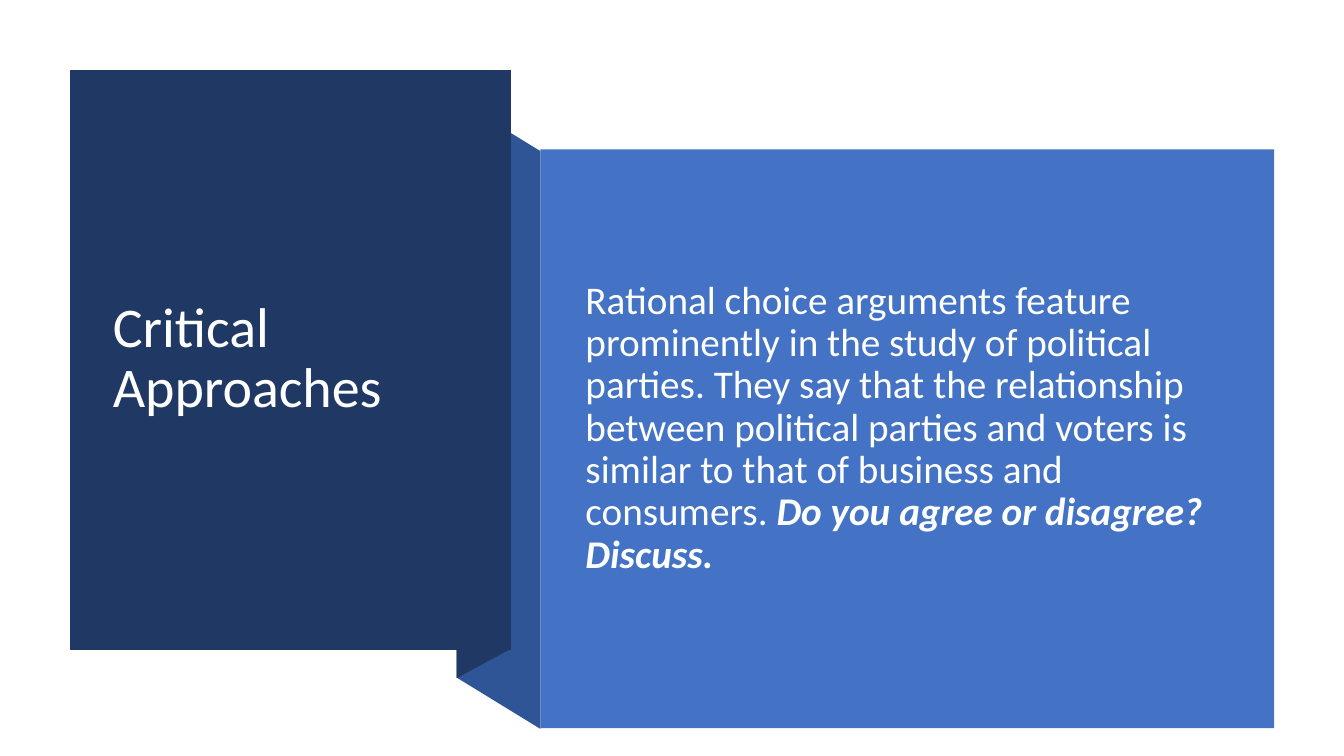
from dataclasses import dataclass

from pptx import Presentation
from pptx.dml.color import RGBColor
from pptx.enum.shapes import MSO_SHAPE
from pptx.enum.text import MSO_ANCHOR, MSO_AUTO_SIZE, PP_ALIGN
from pptx.util import Pt

FONT = "Calibri"
NAVY, BLUE, MID_BLUE, WHITE = "203864", "4472C4", "2F5597", "FFFFFF"


@dataclass
class Panel:
    """Flat outline given by its corners, in points."""
    corners: list[tuple[float, float]]
    fill: str


def rgb(code: str) -> RGBColor:
    return RGBColor.from_string(code)


def paint(sp, fill: str) -> None:
    sp.fill.solid()
    sp.fill.fore_color.rgb = rgb(fill)
    sp.line.fill.background()
    sp.shadow.inherit = False


def draw_panel(s, panel: Panel) -> None:
    start, *rest = [(Pt(x), Pt(y)) for x, y in panel.corners]
    builder = s.shapes.build_freeform(*start)
    builder.add_line_segments(rest, close=True)
    paint(builder.convert_to_shape(), panel.fill)


def place(sp, left: float, top: float, width: float, height: float) -> None:
    sp.left, sp.top, sp.width, sp.height = map(Pt, (left, top, width, height))


def format_text(sp, size: float, color: str) -> None:
    tf = sp.text_frame
    tf.word_wrap = True
    tf.auto_size = MSO_AUTO_SIZE.NONE
    tf.vertical_anchor = MSO_ANCHOR.MIDDLE
    for p in tf.paragraphs:
        p.alignment = PP_ALIGN.LEFT
        p.line_spacing = 0.9
        for r in p.runs:
            r.font.name, r.font.size = FONT, Pt(size)
            r.font.color.rgb = rgb(color)


prs = Presentation()
prs.slide_width, prs.slide_height = Pt(960), Pt(540)
s = prs.slides.add_slide(prs.slide_layouts[5])

# Folded ribbon and title panel, back to front
PANELS = [
    Panel([(386, 520.7), (326.2, 484), (326.2, 71.3), (386, 108)], MID_BLUE),
    Panel([(364.6, 463.7), (326.2, 484.4), (326.2, 70.6), (364.6, 49.9)], NAVY),
    Panel([(50, 50), (364.8, 50), (364.8, 464.2), (50, 464.2)], NAVY),
]
for panel in PANELS:
    draw_panel(s, panel)

# Title, brought in front of its panel
title = s.shapes.title
title.element.getparent().append(title.element)
place(title, 73.4, 77, 267.1, 359.3)
title.text_frame.text = "Critical Approaches"
format_text(title, 40, WHITE)

# Discussion panel
card = s.shapes.add_shape(MSO_SHAPE.RECTANGLE, Pt(386), Pt(106.8), Pt(524.2), Pt(413.3))
paint(card, BLUE)

# Discussion text
body = s.shapes.add_textbox(Pt(411.1), Pt(135.4), Pt(468.7), Pt(341.3))
p = body.text_frame.paragraphs[0]
p.text = (
    "Rational choice arguments feature prominently in the study of political parties. "
    "They say that the relationship between political parties and voters is similar "
    "to that of business and consumers. "
)
p.space_before = Pt(10)
question = p.add_run()
question.text = "Do you agree or disagree? Discuss."
question.font.bold = question.font.italic = True
format_text(body, 28, "FEFFFF")

prs.save("out.pptx")
